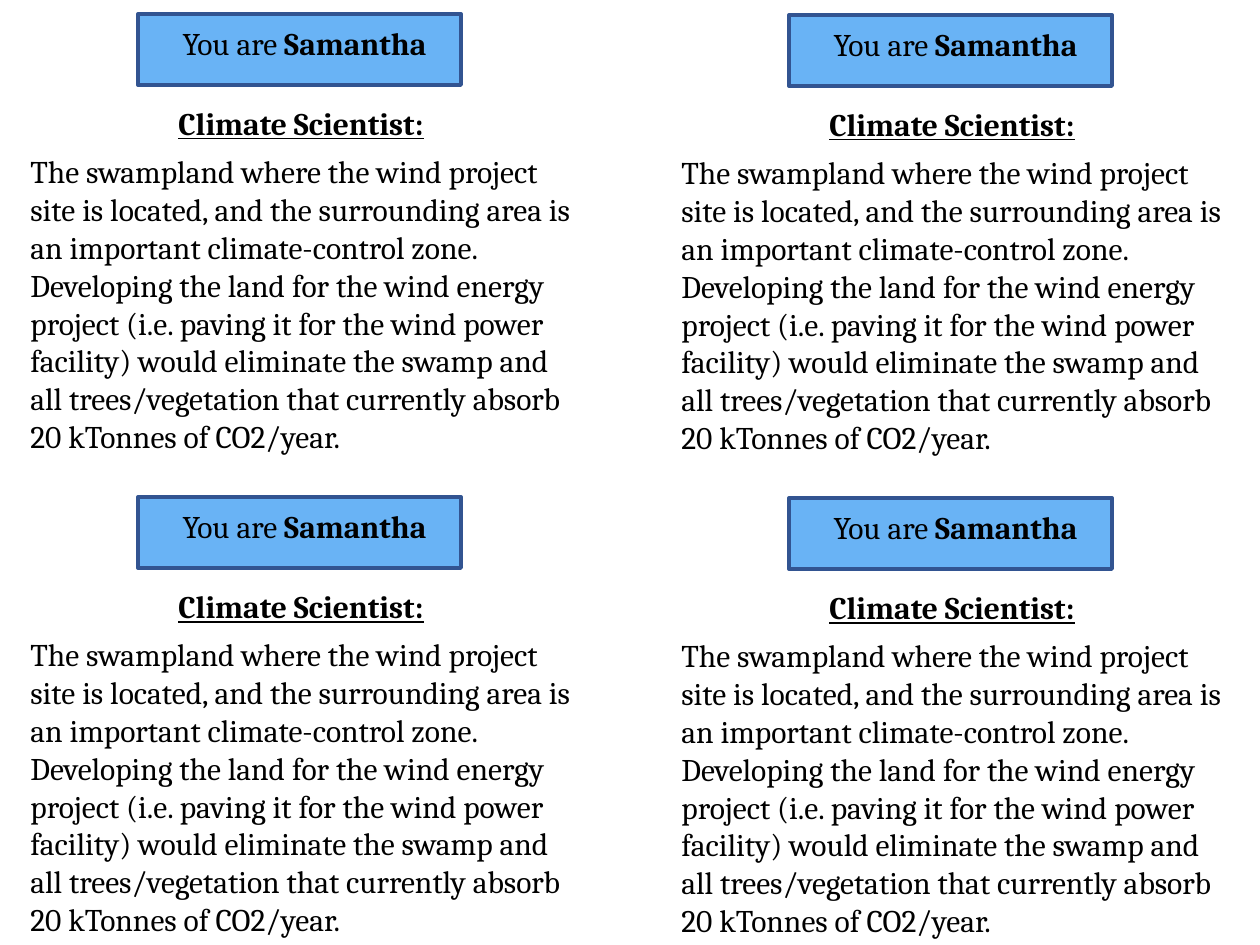
import dataclasses
import itertools

import pptx
import pptx.dml.color
import pptx.enum.shapes
import pptx.enum.text
import pptx.util

PX_PER_INCH = 126
SLIDE_WIDTH, SLIDE_HEIGHT = 1260, 945
CARD_LEFT, CARD_TOP = 18, 14
CARD_WIDTH, CARD_HEIGHT = 573, 452
COLUMN_PITCH, ROW_PITCH = 651, 483
COLUMN_DROP = 1

ROLE_NAME = "Samantha"
ROLE_TITLE = "Climate Scientist:"
ROLE_BRIEF = (
    "The swampland where the wind project site is located, and the surrounding "
    "area is an important climate-control zone. Developing the land for the wind "
    "energy project (i.e. paving it for the wind power facility) would eliminate "
    "the swamp and all trees/vegetation that currently absorb 20 kTonnes of CO2/year."
)


@dataclasses.dataclass(frozen=True)
class Theme:
    """Colours, type and line sizes of the role cards."""

    banner: str = "69B3F5"
    border: str = "325491"
    ink: str = "000000"
    font: str = "Cambria"
    text_size: int = 18
    border_width: float = 2.25
    name_gap: int = 18
    paragraph_gap: int = 6


THEME = Theme()


def px(length):
    """Turn px into EMU."""
    return pptx.util.Emu(round(length * 914400 / PX_PER_INCH))


def rgb(value):
    """Turn a hex string into a colour."""
    return pptx.dml.color.RGBColor.from_string(value)


def add_run(paragraph, text, bold=False, underline=False):
    """Append one run in the theme's type."""
    run = paragraph.add_run()
    run.text = text
    run.font.name = THEME.font
    run.font.size = pptx.util.Pt(THEME.text_size)
    run.font.color.rgb = rgb(THEME.ink)
    run.font.bold = bold
    run.font.underline = underline


def add_banner(slide, left, top, width, height):
    """Draw the bordered band behind the role name."""
    banner = slide.shapes.add_shape(
        pptx.enum.shapes.MSO_SHAPE.RECTANGLE, px(left), px(top), px(width), px(height)
    )
    banner.shadow.inherit = False
    banner.fill.solid()
    banner.fill.fore_color.rgb = rgb(THEME.banner)
    banner.line.color.rgb = rgb(THEME.border)
    banner.line.width = pptx.util.Pt(THEME.border_width)


def add_role_text(slide, left, top, width, height):
    """Write the role's name, title and brief."""
    role_text = slide.shapes.add_textbox(px(left), px(top), px(width), px(height))
    frame = role_text.text_frame
    frame.word_wrap = True
    centre = pptx.enum.text.PP_ALIGN.CENTER

    name = frame.paragraphs[0]
    name.alignment = centre
    name.space_after = pptx.util.Pt(THEME.name_gap)
    add_run(name, "You are ")
    add_run(name, ROLE_NAME, bold=True)

    title = frame.add_paragraph()
    title.alignment = centre
    title.space_before = pptx.util.Pt(THEME.paragraph_gap)
    add_run(title, ROLE_TITLE, bold=True, underline=True)
    add_run(title, " ")

    brief = frame.add_paragraph()
    brief.alignment = pptx.enum.text.PP_ALIGN.LEFT
    brief.space_before = pptx.util.Pt(THEME.paragraph_gap)
    add_run(brief, ROLE_BRIEF)


def add_role_card(slide, left, top, width, height):
    """Place a banner and its text inside the given box."""
    add_banner(slide, left + 120, top, 323, 71)
    add_role_text(slide, left, top + 4, width, height - 4)


def main():
    """Build the sheet of four role cards."""
    deck = pptx.Presentation()
    deck.slide_width = px(SLIDE_WIDTH)
    deck.slide_height = px(SLIDE_HEIGHT)
    slide = deck.slides.add_slide(deck.slide_layouts[6])
    for column, row in itertools.product(range(2), repeat=2):
        add_role_card(
            slide,
            CARD_LEFT + column * COLUMN_PITCH,
            CARD_TOP + row * ROW_PITCH + column * COLUMN_DROP,
            CARD_WIDTH,
            CARD_HEIGHT,
        )
    deck.save("out.pptx")


if __name__ == "__main__":
    main()
